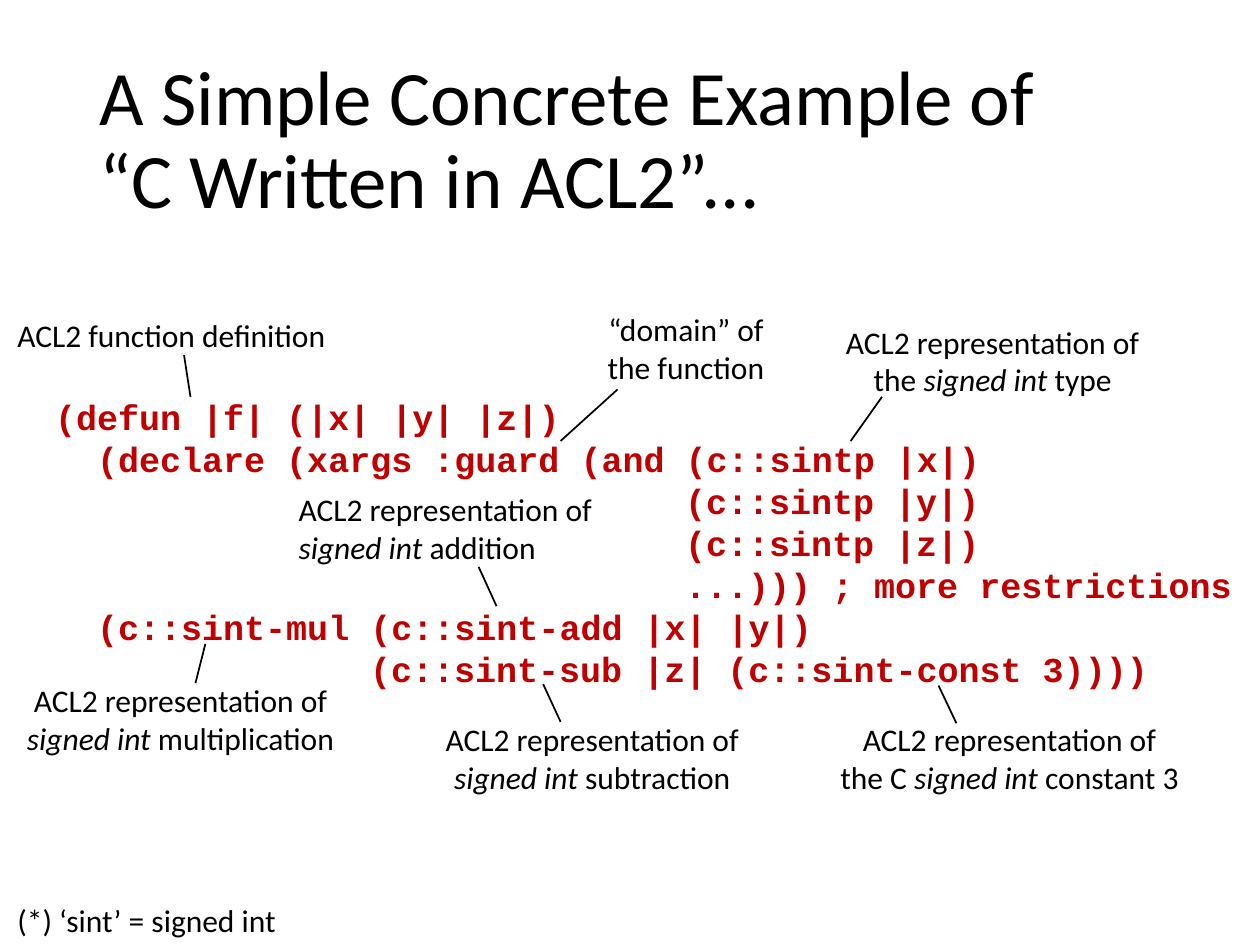
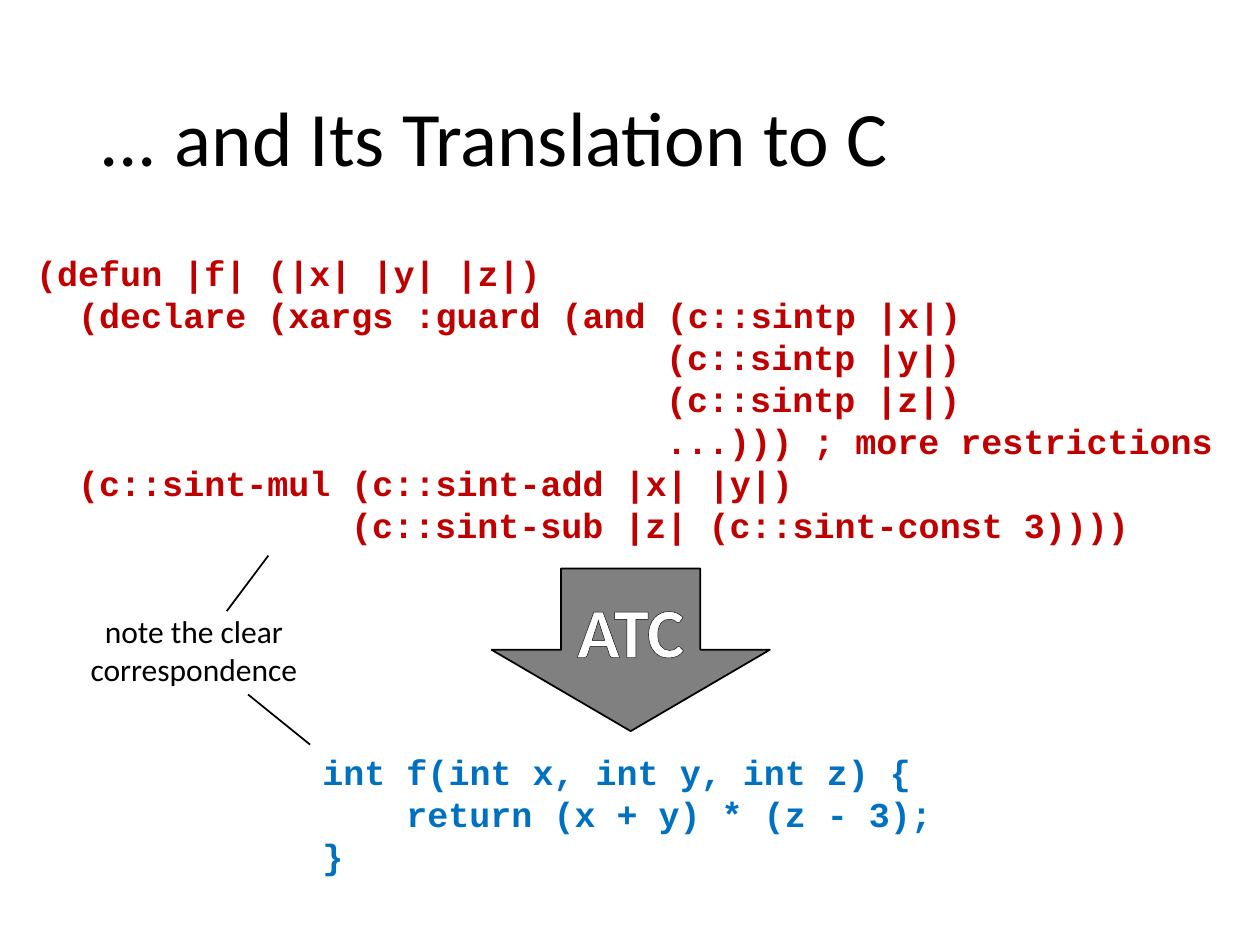
from lxml import etree
from pptx import Presentation
from pptx.dml.color import RGBColor
from pptx.enum.shapes import MSO_CONNECTOR as Link, MSO_SHAPE as Preset
from pptx.enum.text import MSO_ANCHOR as Anchor, PP_ALIGN as Align
from pptx.oxml.ns import qn
from pptx.util import Cm, Pt

BLACK, WHITE, GREY = "000000", "FFFFFF", "808080"
LISP_RED, C_BLUE = "C00000", "0070C0"
BODY_FONT, CODE_FONT = "Calibri", "Courier New"
CODE_SIZE = 20
CODE_COLUMN = Pt(0.6 * CODE_SIZE)  # width of one monospaced character

LISP_CODE = """\
(defun |f| (|x| |y| |z|)
  (declare (xargs :guard (and (c::sintp |x|)
                              (c::sintp |y|)
                              (c::sintp |z|)
                              ...))) ; more restrictions
  (c::sint-mul (c::sint-add |x| |y|)
               (c::sint-sub |z| (c::sint-const 3))))"""

C_CODE = """\
int f(int x, int y, int z) {
    return (x + y) * (z - 3);
}"""

# Callouts: text (italics between underscores), box (left, top, width), pointer, alignment
CALLOUTS = [
    ("ACL2 function definition",
     (0.1, 6.25, 6.81), (3.71, 7.16, 3.84, 8), Align.LEFT),
    ("ACL2 representation of\nthe _signed int_ type",
     (16.76, 6.38, 6.5), (17.78, 8, 17.15, 8.89), Align.CENTER),
    ("ACL2 representation of\n_signed int_ multiplication",
     (0.25, 13.61, 6.78), (4.14, 12.98, 3.94, 13.77), Align.CENTER),
    ("ACL2 representation of\n_signed int_ subtraction",
     (8.69, 14.4, 6.5), (10.95, 13.79, 11.3, 14.55), Align.CENTER),
    ("ACL2 representation of\nthe C _signed int_ constant 3",
     (16.64, 14.4, 7.42), (18.92, 13.82, 19.28, 14.58), Align.CENTER),
    ("ACL2 representation of\n_signed int_ addition",
     (5.77, 9.75, 6.5), (9.65, 11.43, 10.01, 12.22), Align.LEFT),
    ("“domain” of\nthe function",
     (11.99, 6.12, 3.68), (12.45, 7.85, 11.3, 8.89), Align.CENTER),
]


def rgb(hex_colour):
    return RGBColor.from_string(hex_colour)


class Deck:
    """Holds the presentation, its style and the current slide."""

    def __init__(self):
        self.prs = Presentation()
        self.prs.slide_width, self.prs.slide_height = Cm(25.4), Cm(19.05)

    def new_slide(self, title):
        self.slide = self.prs.slides.add_slide(self.prs.slide_layouts[6])
        frame = self.frame(1.75, 1.02, 21.89, 3.68)
        frame.vertical_anchor = Anchor.MIDDLE
        frame.text = title
        frame.paragraphs[0].line_spacing = 0.9
        self.style(frame.paragraphs[0], 44)

    def frame(self, left, top, width, height, wrap=True):
        box = self.slide.shapes.add_textbox(Cm(left), Cm(top), Cm(width), Cm(height))
        box.text_frame.word_wrap = wrap
        return box.text_frame

    def style(self, paragraph, size, colour=BLACK, font=BODY_FONT, bold=False):
        for run in paragraph.runs:
            run.font.size, run.font.name, run.font.bold = Pt(size), font, bold
            run.font.color.rgb = rgb(colour)

    def code(self, source, colour, left, top, width, height):
        frame = self.frame(left, top, width, height)
        lines = source.split("\n")
        frame.text = "\n".join(line.lstrip() for line in lines)
        for paragraph, line in zip(frame.paragraphs, lines):
            depth = len(line) - len(line.lstrip())
            properties = paragraph._p.get_or_add_pPr()
            properties.set("marL", str(depth * CODE_COLUMN))
            properties.set("indent", "0")
            self.style(paragraph, CODE_SIZE, colour, CODE_FONT, bold=True)

    def label(self, text, left, top, width, align=Align.LEFT):
        lines = text.split("\n")
        frame = self.frame(left, top, width, 0.24 + 0.78 * len(lines), wrap=False)
        frame.text = "\n" * (len(lines) - 1)
        for paragraph, line in zip(frame.paragraphs, lines):
            paragraph.alignment = align
            for position, part in enumerate(line.split("_")):
                if part:
                    run = paragraph.add_run()
                    run.text = part
                    run.font.italic = position % 2 == 1
            self.style(paragraph, 18)

    def pointer(self, *ends):
        line = self.slide.shapes.add_connector(Link.STRAIGHT, *map(Cm, ends))
        line.line.color.rgb = rgb(BLACK)
        line.line.width = Pt(1)
        etree.SubElement(line._element.spPr, qn("a:effectLst"))

    def down_arrow(self, text, left, top, width, height):
        arrow = self.slide.shapes.add_shape(
            Preset.DOWN_ARROW, Cm(left), Cm(top), Cm(width), Cm(height))
        arrow.shadow.inherit = False
        arrow.fill.solid()
        arrow.fill.fore_color.rgb = rgb(GREY)
        arrow.line.color.rgb = rgb(BLACK)
        arrow.line.width = Pt(1)
        arrow.text_frame.text = text
        arrow.text_frame.vertical_anchor = Anchor.MIDDLE
        caption = arrow.text_frame.paragraphs[0]
        caption.alignment = Align.CENTER
        self.style(caption, 40, WHITE, bold=True)
        # Outline around the letters
        outline = etree.Element(qn("a:ln"), w=str(Pt(1)))
        fill = etree.SubElement(outline, qn("a:solidFill"))
        etree.SubElement(fill, qn("a:srgbClr"), val=BLACK)
        caption.runs[0]._r.get_or_add_rPr().insert(0, outline)


def main():
    deck = Deck()

    # Annotated ACL2 function
    deck.new_slide("A Simple Concrete Example of\v“C Written in ACL2”...")
    deck.code(LISP_CODE, LISP_RED, 0.86, 7.85, 24.46, 6.25)
    deck.label("(*) ‘sint’ = signed int", 0.1, 18.03, 5.79)
    for text, box, ends, align in CALLOUTS:
        deck.label(text, *box, align)
        deck.pointer(*ends)

    # The same function and its C translation
    deck.new_slide("... and Its Translation to C")
    deck.code(LISP_CODE, LISP_RED, 0.48, 4.95, 24.46, 6.25)
    deck.code(C_CODE, C_BLUE, 6.25, 15.01, 12.9, 2.82)
    deck.down_arrow("ATC", 9.91, 11.46, 5.61, 3.28)
    deck.label("note the clear\ncorrespondence", 1.55, 12.22, 4.72, Align.CENTER)
    deck.pointer(4.57, 12.32, 5.41, 11.2)
    deck.pointer(5, 14, 6.25, 15.01)

    deck.prs.save("out.pptx")


if __name__ == "__main__":
    main()
